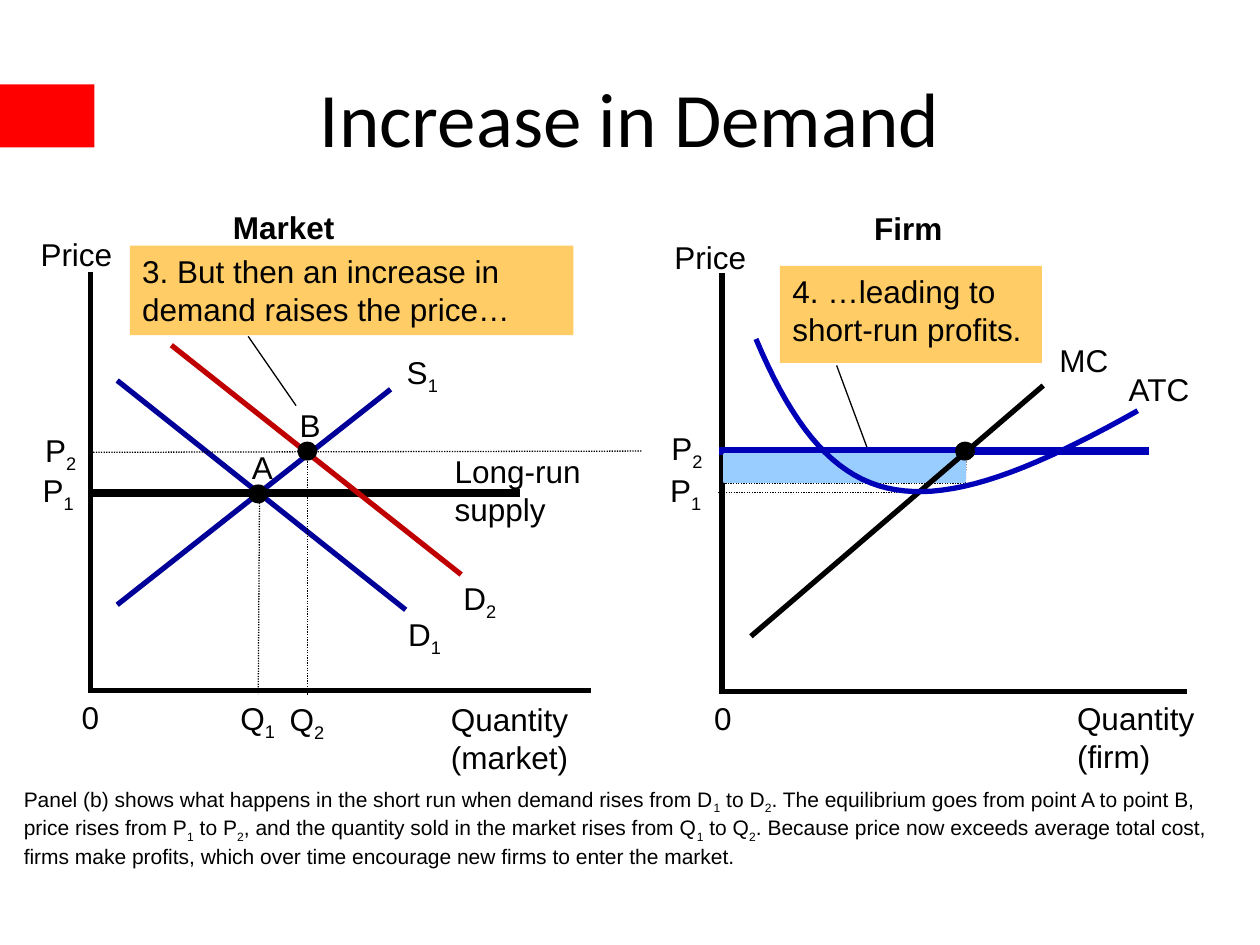
from lxml.etree import SubElement
from pptx import Presentation
from pptx.dml.color import RGBColor
from pptx.enum.dml import MSO_LINE_DASH_STYLE as DASH
from pptx.enum.shapes import MSO_CONNECTOR as CONN, MSO_SHAPE as SHAPE
from pptx.enum.text import MSO_ANCHOR as ANCHOR, MSO_AUTO_SIZE as FIT, PP_ALIGN as ALIGN
from pptx.oxml.ns import qn
from pptx.util import Inches, Pt

THEME = {
    "black": "000000", "accent": "FF0000", "callout": "FFCC66", "profit": "99CCFF",
    "navy": "000099", "blue": "0000B8", "red": "C00000",
    "body_font": "Arial", "title_font": "Calibri",
    "title": 44, "label": 18, "note": 12,
    "thin": 0.75, "area": 2, "normal": 3, "thick": 4.5,
}

TITLE = "Increase in Demand"
NOTE = (
    "Panel (b) shows what happens in the short run when demand rises from D_1 to D_2. "
    "The equilibrium goes from point A to point B, price rises from P_1 to P_2, and the "
    "quantity sold in the market rises from Q_1 to Q_2. Because price now exceeds average "
    "total cost, firms make profits, which over time encourage new firms to enter the market."
)

HEADINGS = [("Market", 1.75, 1.6, 1.23), ("Firm", 6.84, 1.61, 0.84)]
AXIS_TITLES = [("Price", 0.21, 1.82, 0.78), ("Price", 5.24, 1.84, 0.78)]
LABELS = [
    ("Quantity\n(market)", 3.48, 5.51, 1.21), ("0", 0.55, 5.49, 0.34),
    ("Quantity\n(firm)", 8.45, 5.5, 1.14), ("0", 5.57, 5.5, 0.34),
    ("S_1", 3.13, 2.75, 0.46), ("D_1", 3.14, 4.83, 0.48), ("D_2", 3.58, 4.55, 0.48),
    ("Q_1", 1.81, 5.5, 0.49), ("Q_2", 2.2, 5.51, 0.49),
    ("P_1", 0.24, 3.69, 0.46), ("P_2", 0.26, 3.37, 0.46),
    ("P_1", 5.22, 3.69, 0.46), ("P_2", 5.23, 3.36, 0.46),
    ("Long-run\nsupply", 3.51, 3.54, 1.21),
    ("A", 1.9, 3.51, 0.37), ("B", 2.28, 3.17, 0.37),
    ("MC", 8.31, 2.66, 0.59), ("ATC", 8.86, 2.89, 0.69),
]
CALLOUTS = [
    ("3. But then an increase in demand raises the price…", 1.03, 1.95, 3.52, 0.71),
    ("4. …leading to\nshort-run profits.", 6.19, 2.11, 2.08, 0.77),
]

AXES = [
    (0.72, 2.16, 0.72, 5.5), (0.72, 5.48, 4.69, 5.48),
    (5.73, 2.17, 5.73, 5.51), (5.73, 5.49, 9.42, 5.49),
]
GUIDES = [
    (2.06, 3.91, 2.05, 5.51), (2.44, 3.62, 2.44, 5.52), (0.74, 3.59, 5.09, 3.58),
    (5.7, 3.91, 7.3, 3.91), (7.67, 3.56, 7.66, 3.85), (7.65, 3.84, 5.74, 3.84),
]
LEADERS = [(2.35, 3.22, 1.97, 2.67), (6.94, 3.71, 6.64, 2.9)]
SUPPLY_DEMAND = [(0.93, 4.8, 3.1, 3.09), (0.93, 3.02, 3.22, 4.84)]
NEW_DEMAND = [(1.36, 2.74, 3.66, 4.56)]
LONG_RUN_SUPPLY = [(0.73, 3.91, 4.13, 3.91)]
FIRM_PRICE = [(5.71, 3.58, 9.12, 3.58)]
MARGINAL_COST = [(5.96, 5.05, 8.28, 3.06)]
ATC_CONTROLS = [(6, 2.69), (6.62, 4.16), (7.32, 4.22), (9.03, 3.26)]
ATC_STEPS = 40

LINE_GROUPS = [
    (AXES, "black", "normal", None),
    (SUPPLY_DEMAND, "navy", "normal", None),
    (LONG_RUN_SUPPLY, "black", "thick", None),
    (NEW_DEMAND, "red", "normal", None),
    (LEADERS, "black", "thin", None),
    (FIRM_PRICE, "blue", "thick", None),
    (GUIDES, "black", "thin", DASH.ROUND_DOT),
]
PROFIT_AREA = (5.75, 3.61, 1.9, 0.21)
EQUILIBRIA = [(2.05, 3.92), (2.44, 3.58), (7.66, 3.58)]
DOT_W, DOT_H = 0.16, 0.15


def color(name):
    """Return a theme colour."""
    return RGBColor.from_string(THEME[name])


def write(tf, text, size="label", font="body_font", align=ALIGN.LEFT, **extra):
    """Fill a text frame, lowering the character after each underscore."""
    for i, line in enumerate(text.split("\n")):
        p = tf.paragraphs[0] if i == 0 else tf.add_paragraph()
        p.alignment = align
        first, *rest = line.split("_")
        pieces = [(first, False)]
        for part in rest:
            pieces += [(part[0], True), (part[1:], False)]
        for piece, lowered in pieces:
            if not piece:
                continue
            r = p.add_run()
            r.text = piece
            style = {"name": THEME[font], "size": Pt(THEME[size]), **extra}
            for key, value in style.items():
                setattr(r.font, key, value)
            r.font.color.rgb = color("black")
            if lowered:
                r.font._element.set("baseline", "-25000")


def add_text(s, text, x, y, w, h=0.4, wrap=False, anchor=ANCHOR.TOP, fit=FIT.SHAPE_TO_FIT_TEXT, **style):
    """Add a text box."""
    tf = s.shapes.add_textbox(*map(Inches, (x, y, w, h))).text_frame
    for key, value in {"word_wrap": wrap, "auto_size": fit, "vertical_anchor": anchor}.items():
        setattr(tf, key, value)
    write(tf, text, **style)


def add_block(s, kind, box, fill, outlined=False):
    """Add a filled preset shape."""
    sp = s.shapes.add_shape(kind, *map(Inches, box))
    sp.shadow.inherit = False
    sp.fill.solid()
    sp.fill.fore_color.rgb = color(fill)
    if outlined:
        set_line(sp.line, fill, "area")
    else:
        sp.line.fill.background()
    return sp


def set_line(line, name, weight, dash=None):
    """Style an outline."""
    line.color.rgb = color(name)
    line.width = Pt(THEME[weight])
    if dash:
        line.dash_style = dash


def add_lines(s, segments, name, weight, dash=None):
    """Add straight lines of one style."""
    for ends in segments:
        c = s.shapes.add_connector(CONN.STRAIGHT, *map(Inches, ends))
        set_line(c.line, name, weight, dash)
        SubElement(c._element.spPr, qn("a:effectLst"))


def bezier(controls, t):
    """Return the point at t on a cubic curve."""
    weights = ((1 - t) ** 3, 3 * t * (1 - t) ** 2, 3 * t * t * (1 - t), t ** 3)
    return tuple(Inches(sum(w * c for w, c in zip(weights, axis))) for axis in zip(*controls))


def add_curve(s, controls, name, weight):
    """Add an open curve without fill."""
    points = [bezier(controls, i / ATC_STEPS) for i in range(ATC_STEPS + 1)]
    builder = s.shapes.build_freeform(*points[0])
    builder.add_line_segments(points[1:], close=False)
    sp = builder.convert_to_shape()
    sp.shadow.inherit = False
    sp.fill.background()
    set_line(sp.line, name, weight)


def main():
    """Build the slide and save it."""
    prs = Presentation()
    prs.slide_width, prs.slide_height = Inches(10), Inches(7.5)
    s = prs.slides.add_slide(prs.slide_layouts[6])

    add_block(s, SHAPE.RECTANGLE, (0, 0.67, 0.75, 0.5), "accent")
    add_text(s, TITLE, 0.5, 0.3, 9, 1.25, wrap=True, anchor=ANCHOR.MIDDLE, fit=FIT.NONE,
             size="title", font="title_font", align=ALIGN.CENTER)
    for group in LINE_GROUPS:
        add_lines(s, *group)
    add_block(s, SHAPE.RECTANGLE, PROFIT_AREA, "profit", outlined=True)
    add_lines(s, MARGINAL_COST, "black", "normal")
    add_curve(s, ATC_CONTROLS, "blue", "normal")
    for x, y in EQUILIBRIA:
        add_block(s, SHAPE.OVAL, (x - DOT_W / 2, y - DOT_H / 2, DOT_W, DOT_H), "black")
    for text, *box in CALLOUTS:
        tf = add_block(s, SHAPE.RECTANGLE, box, "callout").text_frame
        tf.word_wrap, tf.vertical_anchor = True, ANCHOR.TOP
        write(tf, text)
    for heading in HEADINGS:
        add_text(s, *heading, wrap=True, bold=True)
    for axis_title in AXIS_TITLES:
        add_text(s, *axis_title, align=ALIGN.RIGHT)
    for text, x, y, w in LABELS:
        add_text(s, text, x, y, w, 0.77 if "\n" in text else 0.4)
    add_text(s, NOTE, 0.09, 6.19, 9.82, 0.71, wrap=True, size="note")
    prs.save("out.pptx")


if __name__ == "__main__":
    main()
